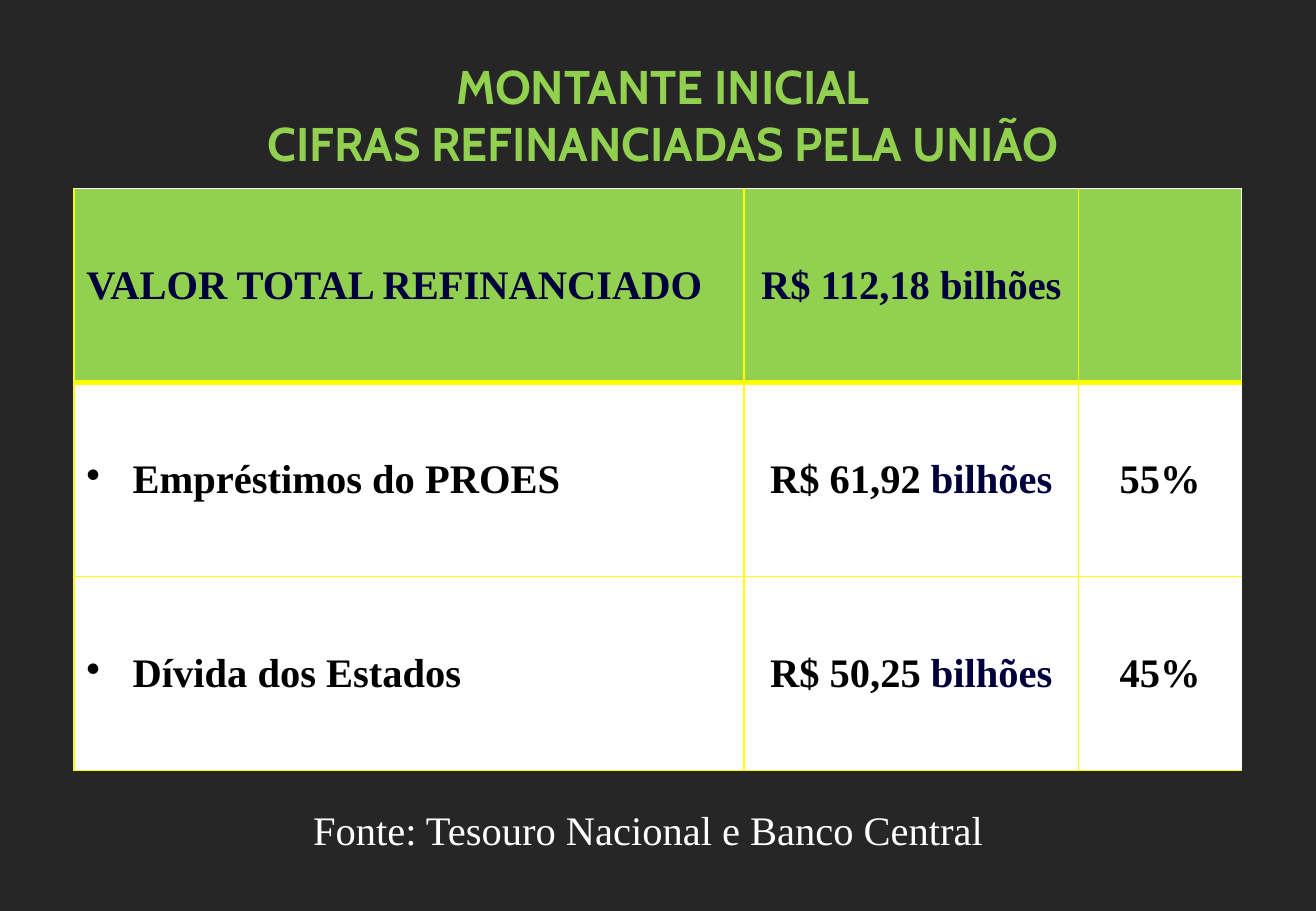
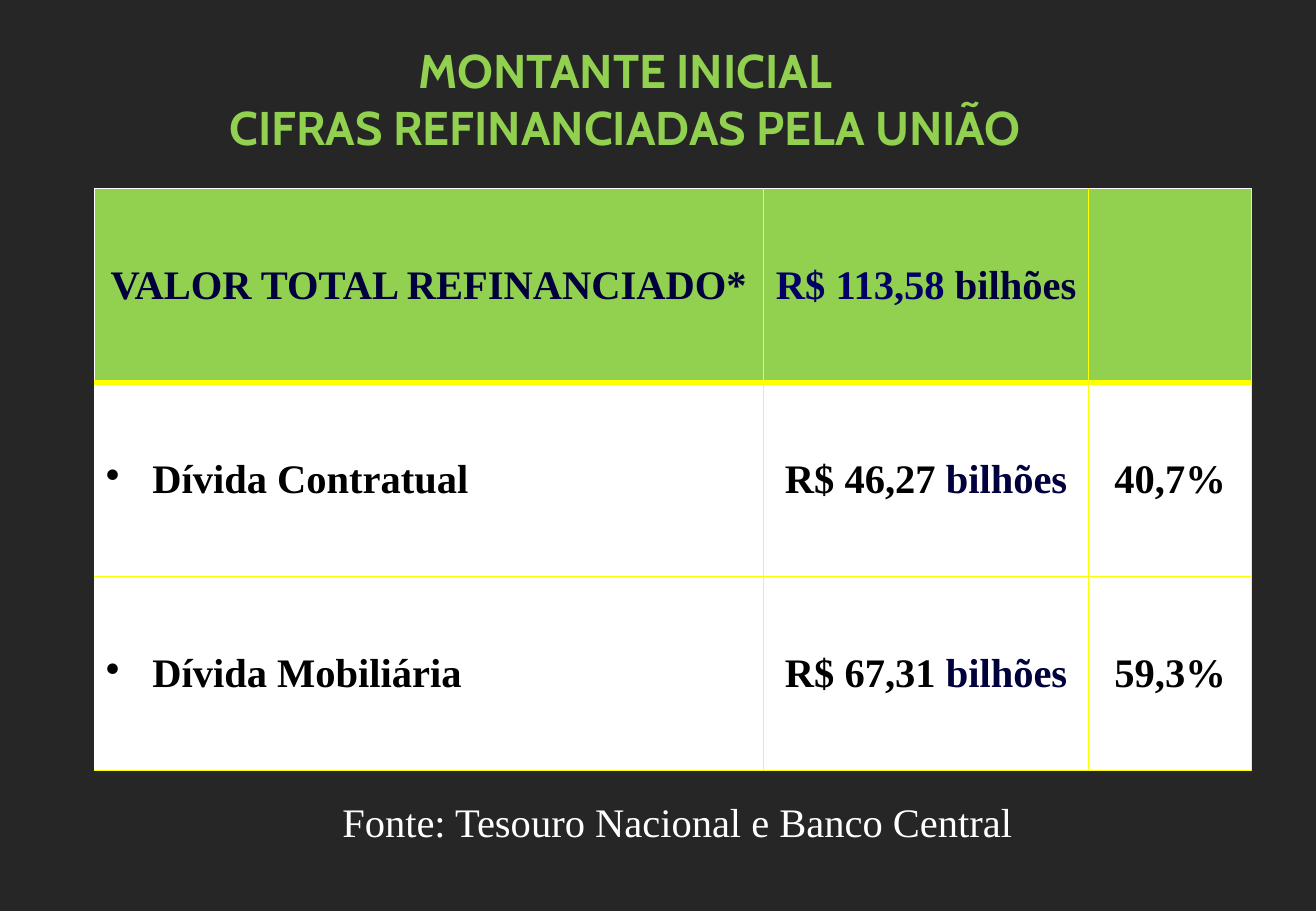
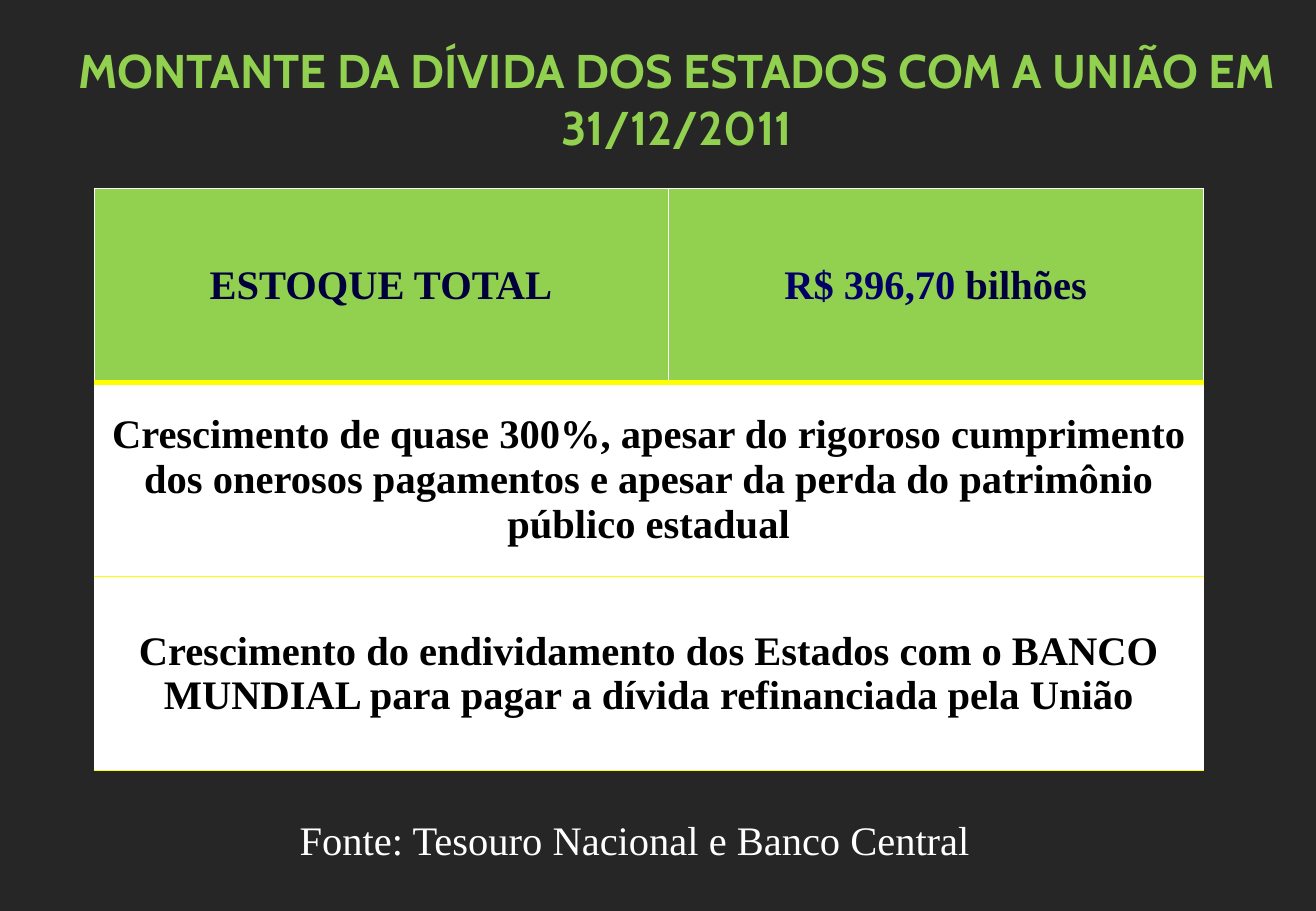
from lxml import etree
from pptx import Presentation
from pptx.dml.color import RGBColor
from pptx.enum.text import MSO_ANCHOR, PP_ALIGN
from pptx.oxml.ns import qn
from pptx.util import Cm, Pt

CENTER, LEFT = PP_ALIGN.CENTER, PP_ALIGN.LEFT
MIDDLE = MSO_ANCHOR.MIDDLE

# Shared look
DARK, GREEN, WHITE, BLACK = "262626", "92D050", "FFFFFF", "000000"
NAVY, BLUE, YELLOW = "00003D", "000066", "FFFF00"
TITLE_FONT, BODY_FONT = "Cabin", "Times New Roman"
TITLE_SIZE, BODY_SIZE = 28, 24
BULLET_INDENT = Cm(0.97)
SLIM_MARGIN = Cm(0.03)
ROW_HEIGHT = 4.06
TABLE_TOP = 3.94
TITLE_HEIGHT = 2.64
SOURCE_HEIGHT = 1.27
SOURCE = "Fonte: Tesouro Nacional e Banco Central"
INITIAL_TITLE = ["MONTANTE INICIAL", "CIFRAS REFINANCIADAS PELA UNIÃO"]


def color(code):
    return RGBColor.from_string(code)


def add_span(para, text, code, font=BODY_FONT, size=BODY_SIZE, bold=True):
    span = para.add_run()
    span.text = text
    span.font.name = font
    span.font.size = Pt(size)
    span.font.bold = bold
    span.font.color.rgb = color(code)


def add_lines(page, area, lines, code, font, size, bold):
    """Centred text box with one paragraph for each line."""
    box = page.shapes.add_textbox(*map(Cm, area))
    frame = box.text_frame
    frame.word_wrap = True
    for index, line in enumerate(lines):
        para = frame.add_paragraph() if index else frame.paragraphs[0]
        para.alignment = CENTER
        add_span(para, line, code, font, size, bold)


def add_title(page, left, top, width, lines):
    area = (left, top, width, TITLE_HEIGHT)
    add_lines(page, area, lines, GREEN, TITLE_FONT, TITLE_SIZE, True)


def add_source(page, left, top, width):
    area = (left, top, width, SOURCE_HEIGHT)
    add_lines(page, area, [SOURCE], WHITE, BODY_FONT, BODY_SIZE, False)


def set_border(cell, side, code, points):
    line = etree.SubElement(cell._tc.get_or_add_tcPr(), qn("a:ln" + side),
                            w=str(Pt(points)))
    fill = etree.SubElement(line, qn("a:solidFill"))
    etree.SubElement(fill, qn("a:srgbClr"), val=code)


def set_bullet(para):
    properties = para._p.get_or_add_pPr()
    properties.set("marL", str(BULLET_INDENT))
    properties.set("indent", str(-BULLET_INDENT))
    etree.SubElement(properties, qn("a:buChar"), char="•")


def style_cell(cell, row, column, ruled):
    """Borders and fill; ruled holds the column edges drawn in yellow."""
    yellow, hairline = (YELLOW, 1), (WHITE, 0.25)
    header_rule = (YELLOW, 3)
    set_border(cell, "L", *(yellow if column in ruled else hairline))
    set_border(cell, "R", *(yellow if column + 1 in ruled else hairline))
    set_border(cell, "T", *(hairline, header_rule, yellow)[row])
    set_border(cell, "B", *(yellow if row else header_rule))
    cell.fill.solid()
    cell.fill.fore_color.rgb = color(WHITE if row else GREEN)
    cell.vertical_anchor = MIDDLE


def fill_cell(cell, spans, align, bullet):
    para = cell.text_frame.paragraphs[0]
    para.alignment = align
    if align == CENTER:
        cell.margin_left = cell.margin_right = SLIM_MARGIN
    if bullet:
        set_bullet(para)
    for text, code in spans:
        add_span(para, text, code)


def add_debt_table(page, left, widths, rows, ruled, left_cells=()):
    """Green header over white rows; a row with one cell spans the table."""
    frame = page.shapes.add_table(
        len(rows), len(widths), Cm(left), Cm(TABLE_TOP),
        Cm(sum(widths)), Cm(ROW_HEIGHT * len(rows)))
    table = frame.table
    for column, width in zip(table.columns, widths):
        column.width = Cm(width)
    for r, row in enumerate(rows):
        table.rows[r].height = Cm(ROW_HEIGHT)
        for c in range(len(widths)):
            style_cell(table.cell(r, c), r, c, ruled)
        if len(row) == 1:
            table.cell(r, 0).merge(table.cell(r, len(widths) - 1))
        for c, spans in enumerate(row):
            is_left = (r, c) in left_cells
            fill_cell(table.cell(r, c), spans, LEFT if is_left else CENTER,
                      is_left and r > 0)


def amount(number, code=BLACK):
    return [(f"R$ {number} ", code), ("bilhões", NAVY)]


def share_row(label, number, percent):
    return [[(label, BLACK)], amount(number), [(percent, BLACK)]]


def proes_slide(page):
    add_debt_table(page, 1.55, [14, 7, 3.4], [
        [[("VALOR TOTAL REFINANCIADO", NAVY)], amount("112,18", NAVY), []],
        share_row("Empréstimos do PROES", "61,92", "55%"),
        share_row("Dívida dos Estados", "50,25", "45%"),
    ], ruled={0, 1, 2}, left_cells={(0, 0), (1, 0), (2, 0)})
    add_title(page, 1.55, 1.07, 24.61, INITIAL_TITLE)
    add_source(page, 4.95, 16.71, 17.2)


def debt_type_slide(page):
    add_debt_table(page, 1.96, [14, 6.8, 3.4], [
        [[("VALOR TOTAL REFINANCIADO*", NAVY)], amount("113,58", BLUE), []],
        share_row("Dívida Contratual", "46,27", "40,7%"),
        share_row("Dívida Mobiliária", "67,31", "59,3%"),
    ], ruled={1, 2, 3}, left_cells={(1, 0), (2, 0)})
    add_title(page, 0.76, 0.74, 24.61, INITIAL_TITLE)
    add_source(page, 5.16, 16.54, 18)


def stock_slide(page):
    add_debt_table(page, 1.96, [12, 11.2], [
        [[("ESTOQUE TOTAL", NAVY)], amount("396,70", BLUE)],
        [[("Crescimento de quase 300%, apesar do rigoroso cumprimento dos "
           "onerosos pagamentos e apesar da perda do patrimônio público "
           "estadual", BLACK)]],
        [[("Crescimento do endividamento dos Estados com o BANCO MUNDIAL "
           "para pagar a dívida refinanciada pela União", BLACK)]],
    ], ruled=set())
    add_title(page, 0.76, 0.74, 26.77,
              ["MONTANTE DA DÍVIDA DOS ESTADOS COM A UNIÃO EM 31/12/2011"])
    add_source(page, 2.77, 16.92, 21)


def main():
    deck = Presentation()
    deck.slide_width, deck.slide_height = Cm(27.51), Cm(19.05)
    # Dark background for every slide
    backdrop = deck.slide_master.background.fill
    backdrop.solid()
    backdrop.fore_color.rgb = color(DARK)
    blank = deck.slide_layouts[6]
    for build in (proes_slide, debt_type_slide, stock_slide):
        build(deck.slides.add_slide(blank))
    deck.save("out.pptx")


if __name__ == "__main__":
    main()
